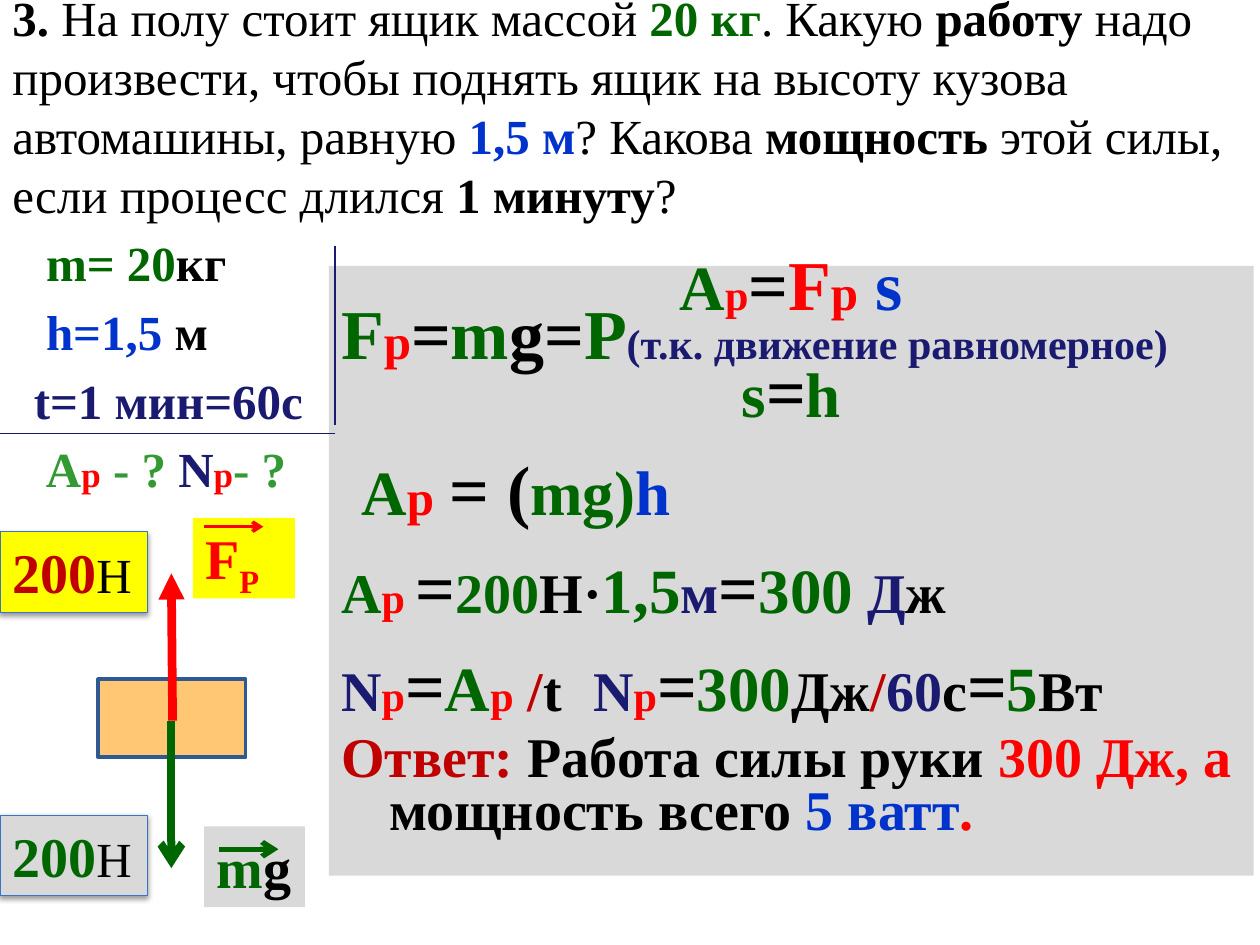
"""Build a physics slide on the work and power of lifting a box."""
import dataclasses

import pptx
import pptx.dml.color
import pptx.enum.dml
import pptx.enum.shapes
import pptx.enum.text
import pptx.oxml
import pptx.oxml.ns
import pptx.util

Inches = pptx.util.Inches
Pt = pptx.util.Pt
Align = pptx.enum.text.PP_ALIGN
NS = pptx.oxml.ns.nsdecls("a")


@dataclasses.dataclass(frozen=True)
class Theme:
    font: str = "Times New Roman"
    black: str = "000000"
    green: str = "006600"
    lime: str = "339933"
    blue: str = "0033CC"
    navy: str = "1A1A70"
    red: str = "FF0000"
    wine: str = "C00000"
    gray: str = "D9D9D9"
    yellow: str = "FFFF00"
    orange: str = "FF9900"
    edge: str = "3975C5"
    frame: str = "2E5992"
    tiny: int = 20
    note: int = 24
    text: int = 28
    large: int = 32
    big: int = 36
    huge: int = 40


T = Theme()


def color(code):
    return pptx.dml.color.RGBColor.from_string(code)


def paint(shape, fill, line=None, width=0.75):
    shape.fill.solid()
    shape.fill.fore_color.rgb = color(fill)
    if line:
        shape.line.color.rgb = color(line)
        shape.line.width = Pt(width)


def write(para, runs, bold=True):
    for text, code, size, *style in runs:
        run = para.add_run()
        run.text = text
        run.font.name = T.font
        run.font.size = Pt(size)
        run.font.bold = style[0] if style else bold
        run.font.color.rgb = color(code)


def space(para, left=0.38, first=-0.38):
    props = para._p.get_or_add_pPr()
    props.set("marL", str(Inches(left)))
    props.set("indent", str(Inches(first)))
    gap = pptx.oxml.parse_xml(f'<a:spcBef {NS}><a:spcPct val="20000"/></a:spcBef>')
    props.append(gap)


def add_tab(para, pos):
    tabs = f'<a:tabLst {NS}><a:tab pos="{Inches(pos)}" algn="l"/></a:tabLst>'
    para._p.get_or_add_pPr().append(pptx.oxml.parse_xml(tabs))


def add_text(slide, box, wrap=True):
    shape = slide.shapes.add_textbox(*map(Inches, box))
    shape.text_frame.word_wrap = wrap
    return shape


def add_label(slide, box, fill, runs, wrap=False):
    shape = add_text(slide, box, wrap)
    paint(shape, fill)
    shape.text_frame.auto_size = pptx.enum.text.MSO_AUTO_SIZE.SHAPE_TO_FIT_TEXT
    write(shape.text_frame.paragraphs[0], runs)
    return shape


def add_force(slide, top, fill, code):
    runs = [("200", code, T.large), ("Н", T.black, T.text, False)]
    shape = add_label(slide, (0, top, 1.17, 0.64), fill, runs, True)
    paint(shape, fill, T.edge)
    shape._element.spPr.append(pptx.oxml.parse_xml(
        f'<a:effectLst {NS}><a:outerShdw blurRad="{Pt(3.1)}" dist="{Pt(1.6)}" '
        f'dir="5400000" rotWithShape="0"><a:srgbClr val="{T.black}">'
        '<a:alpha val="38000"/></a:srgbClr></a:outerShdw></a:effectLst>'))


def add_line(slide, ends, code, width, head=None):
    kind = pptx.enum.shapes.MSO_CONNECTOR.STRAIGHT
    line = slide.shapes.add_connector(kind, *map(Inches, ends))
    line.line.color.rgb = color(code)
    line.line.width = Pt(width)
    if head:
        tail = pptx.oxml.parse_xml(f'<a:tailEnd {NS} type="{head}"/>')
        line.line._get_or_add_ln().append(tail)
    line._element.spPr.append(pptx.oxml.parse_xml(f"<a:effectLst {NS}/>"))


def add_crate(slide):
    kind = pptx.enum.shapes.MSO_SHAPE.RECTANGLE
    crate = slide.shapes.add_shape(kind, *map(Inches, (0.78, 5.39, 1.17, 0.62)))
    crate.shadow.inherit = False
    paint(crate, T.orange, T.frame, 2)
    tint = crate._element.spPr.find(".//" + pptx.oxml.ns.qn("a:srgbClr"))
    tint.append(pptx.oxml.parse_xml(f'<a:alpha {NS} val="55000"/>'))


def add_task(slide):
    frame = add_text(slide, (0, -0.05, 10, 1.77)).text_frame
    frame.vertical_anchor = pptx.enum.text.MSO_ANCHOR.MIDDLE
    parts = [
        ("3. ", T.black, True), ("На полу стоит ящик массой ", T.black, False),
        ("20 кг", T.green, True), (". Какую ", T.black, False),
        ("работу", T.black, True),
        (" надо произвести, чтобы поднять ящик на высоту кузова автомашины, равную ",
         T.black, False),
        ("1,5 м", T.blue, True), ("? Какова ", T.black, False),
        ("мощность ", T.black, True),
        ("этой силы, если процесс длился ", T.black, False),
        ("1 минуту", T.black, True), ("?", T.black, False)]
    write(frame.paragraphs[0], [(text, code, T.text, bold) for text, code, bold in parts])


def add_rows(frame, rows):
    for index, (runs, align, lead) in enumerate(rows):
        para = frame.paragraphs[0] if index == 0 else frame.add_paragraph()
        para.alignment = align
        if lead:
            para.line_spacing = Pt(lead)
        write(para, runs)
    return frame.paragraphs


def add_given(slide):
    frame = add_text(slide, (0.17, 1.8, 2.53, 2.36)).text_frame
    sub = ("р", T.red, T.tiny)
    rows = [
        [(" ", T.lime, T.text), ("m= 20", T.green, T.text), ("кг", T.black, T.text)],
        [(" ", T.lime, T.text), ("h=1,5 ", T.blue, T.text), ("м", T.black, T.text)],
        [("t=1 мин=60с", T.navy, T.text)],
        [(" А", T.lime, T.text), sub, (" - ?", T.lime, T.text),
         (" N", T.navy, T.text), sub, ("- ?", T.lime, T.text)]]
    for para in add_rows(frame, [(runs, Align.LEFT, None) for runs in rows]):
        space(para)


def add_proof(slide):
    shape = add_text(slide, (2.61, 2.11, 7.34, 4.84))
    paint(shape, T.gray)
    same, sub, mid = ("=", T.black, T.huge), ("р", T.red, T.note), ("р", T.red, T.text)
    rows = [
        ([("А", T.green, T.big), sub, same, ("F", T.red, T.huge), mid,
          (" ", T.lime, T.huge), ("s", T.blue, T.huge)], Align.CENTER, 30),
        ([("F", T.green, T.huge), mid, same, ("m", T.green, T.huge),
          ("g=", T.black, T.huge), ("P", T.green, T.huge),
          ("(т.к. движение равномерное)", T.navy, T.note)], Align.LEFT, 20),
        ([("s", T.green, T.big), same, ("h", T.green, T.big)], Align.CENTER, 25),
        ([("A", T.green, T.big), mid, (" ", T.red, T.big), ("= (", T.black, T.huge),
          ("mg)", T.green, T.big), ("h", T.blue, T.big)], Align.LEFT, None),
        ([("A", T.green, T.large), ("р ", T.red, T.note), same,
          ("200", T.green, T.large), ("Н·", T.black, T.large), ("1,5", T.green, T.big),
          ("м", T.navy, T.large), same, ("300", T.green, T.big), (" ", T.lime, T.large),
          ("Д", T.navy, T.large), ("ж", T.black, T.large)], Align.LEFT, None),
        ([("N", T.navy, T.large), sub, same, ("A", T.green, T.big), sub,
          (" ", T.red, T.large), ("/", T.wine, T.large), ("t", T.black, T.large),
          ("\tN", T.navy, T.large), sub, same, ("300", T.green, T.big),
          ("Дж", T.black, T.large), ("/", T.wine, T.large), ("60", T.navy, T.large),
          ("c", T.black, T.large), same, ("5", T.green, T.big),
          ("Вт", T.black, T.large)], Align.LEFT, None),
        ([("Ответ: ", T.wine, T.large), ("Работа силы руки ", T.black, T.large),
          ("300 Дж, а ", T.red, T.large), ("мощность всего ", T.black, T.large),
          ("5 ватт", T.blue, T.large), (".", T.red, T.large)], Align.LEFT, 30)]
    indents = {3: (0.16, 0), 5: (0, 0)}
    paras = add_rows(shape.text_frame, rows)
    for index, para in enumerate(paras):
        space(para, *indents.get(index, (0.38, -0.38)))
    add_tab(paras[5], 2.19)


def main():
    deck = pptx.Presentation()
    deck.slide_width, deck.slide_height = Inches(10), Inches(7.5)
    slide = deck.slides.add_slide(deck.slide_layouts[6])
    add_crate(slide)
    add_task(slide)
    add_given(slide)
    add_proof(slide)
    add_line(slide, (-0.57, 3.44, 2.66, 3.44), T.navy, 0.75)
    add_line(slide, (2.66, 1.95, 2.66, 3.37), T.navy, 0.75)
    add_line(slide, (1.36, 5.72, 1.36, 6.89), T.green, 4.5, "arrow")
    add_label(slide, (1.62, 6.56, 0.8, 0.64), T.gray,
              [("m", T.green, T.large), ("g", T.black, T.large)])
    add_line(slide, (1.37, 5.72, 1.36, 4.55), T.red, 5, "triangle")
    force = add_label(slide, (1.53, 4.11, 0.81, 0.64), T.yellow,
                      [("F", T.red, T.large), ("Р", T.red, T.large)])
    low = force.text_frame.paragraphs[0].runs[1]
    low.font._element.set("baseline", "-25000")
    add_line(slide, (1.62, 4.18, 2.09, 4.18), T.red, 2, "arrow")
    add_line(slide, (1.74, 6.74, 2.21, 6.74), T.green, 3, "arrow")
    add_force(slide, 6.47, T.gray, T.green)
    add_force(slide, 4.22, T.yellow, T.wine)
    deck.save("out.pptx")


if __name__ == "__main__":
    main()
